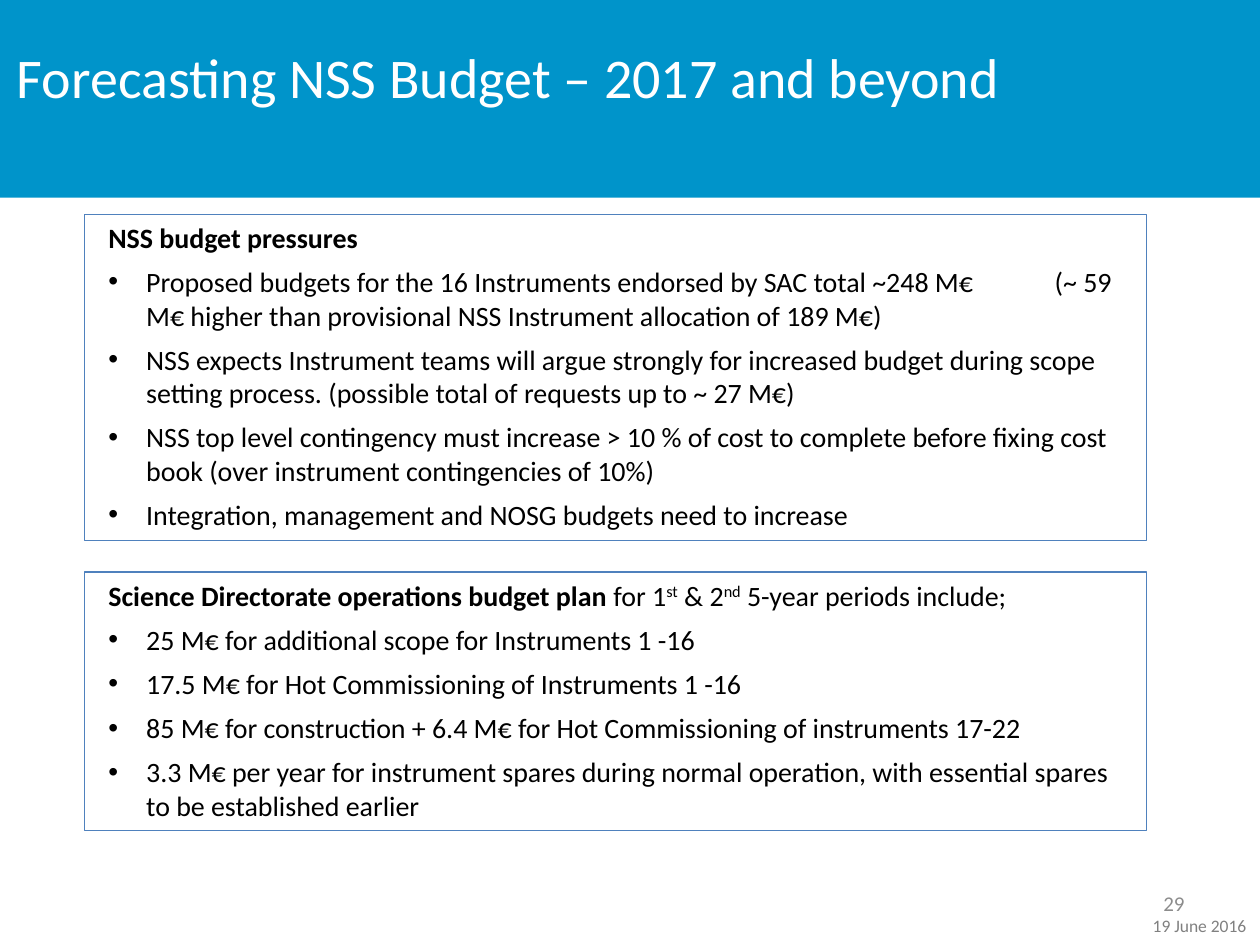
from lxml.etree import SubElement
from pptx import Presentation
from pptx.dml.color import RGBColor
from pptx.enum.shapes import MSO_SHAPE
from pptx.enum.text import MSO_ANCHOR, MSO_AUTO_SIZE, PP_ALIGN
from pptx.oxml.ns import qn
from pptx.util import Inches, Pt

COLUMNS, ROWS = 100, 75
TWO_CONTENT_LAYOUT = 3


def color(value):
    return RGBColor.from_string(value)


class BudgetSlide:
    """Holds the style and the current slide; places are columns and rows."""

    font = "Calibri"
    blue, white, black = "0094CA", "FFFFFF", "000000"
    outline, gray = "4F81BD", "808080"
    list_size = 16

    def __init__(self, deck):
        self.column = deck.slide_width / COLUMNS
        self.row = deck.slide_height / ROWS
        self.page = deck.slides.add_slide(deck.slide_layouts[TWO_CONTENT_LAYOUT])

    def area(self, left, top, width, height):
        return (round(left * self.column), round(top * self.row),
                round(width * self.column), round(height * self.row))

    def move(self, shape, *place):
        shape.left, shape.top, shape.width, shape.height = self.area(*place)

    def style(self, font, size, value, bold=False):
        font.name, font.size, font.bold = self.font, Pt(size), bold
        font.color.rgb = color(value)

    def band(self, *place):
        """Draw the header band behind everything else."""
        band = self.page.shapes.add_shape(MSO_SHAPE.RECTANGLE, *self.area(*place))
        band.shadow.inherit = False
        band.fill.solid()
        band.fill.fore_color.rgb = color(self.blue)
        band.line.fill.background()
        self.page.shapes._spTree.insert(2, band._element)

    def title(self, text, *place):
        title = self.page.shapes.title
        self.move(title, *place)
        frame = title.text_frame
        frame.text = text
        frame.vertical_anchor = MSO_ANCHOR.TOP
        frame.auto_size = MSO_AUTO_SIZE.NONE
        frame.paragraphs[0].alignment = PP_ALIGN.CENTER
        self.style(frame.paragraphs[0].runs[0].font, 32, self.white)

    def label(self, text, size, value, align, *place):
        box = self.page.shapes.add_textbox(*self.area(*place))
        frame = box.text_frame
        frame.text = text
        frame.vertical_anchor = MSO_ANCHOR.MIDDLE
        frame.paragraphs[0].alignment = align
        self.style(frame.paragraphs[0].runs[0].font, size, value)

    def indent(self, paragraph, left, hanging, bullet=None, tab=None):
        properties = paragraph._p.get_or_add_pPr()
        properties.set("marL", str(Inches(left)))
        properties.set("indent", str(-Inches(hanging)))
        if bullet:
            SubElement(properties, qn("a:buFont"), typeface="Arial")
            SubElement(properties, qn("a:buChar"), char=bullet)
        else:
            SubElement(properties, qn("a:buNone"))
        if tab:
            stops = SubElement(properties, qn("a:tabLst"))
            SubElement(stops, qn("a:tab"), pos=str(Inches(tab)), algn="l")

    def panel(self, index, heading, items, *place):
        """Fill an outlined list; heading is (text, bold, baseline) spans."""
        panel = self.page.placeholders[index]
        self.move(panel, *place)
        panel.fill.solid()
        panel.fill.fore_color.rgb = color(self.white)
        panel.line.color.rgb = color(self.outline)
        panel.line.width = Pt(0.75)
        frame = panel.text_frame
        frame.word_wrap = True
        frame.auto_size = MSO_AUTO_SIZE.NONE
        frame.vertical_anchor = MSO_ANCHOR.TOP

        first = frame.paragraphs[0]
        self.indent(first, 0.5, 0.41)
        first.space_before = Pt(0)
        for text, bold, baseline in heading:
            span = first.add_run()
            span.text = text
            self.style(span.font, self.list_size, self.black, bold)
            if baseline:
                span.font._element.set("baseline", str(baseline * 1000))

        for item in items:
            para = frame.add_paragraph()
            para.text = item
            self.indent(para, 0.39, 0.3, "•", 7.6 if "\t" in item else None)
            para.space_before = Pt(6)
            for span in para.runs:
                self.style(span.font, self.list_size, self.black)


def main():
    deck = Presentation()
    deck.slide_width, deck.slide_height = Inches(10), Inches(7.5)
    slide = BudgetSlide(deck)
    slide.band(0, 0, COLUMNS, 15.7)
    slide.title("Forecasting NSS Budget – 2017 and beyond", 0, 2.9, 80.7, 9.5)
    slide.label("29", 12, "8C8C8C", PP_ALIGN.RIGHT, 71.7, 69.7, 23.3, 4)
    slide.label("19 June 2016", 10, slide.gray, PP_ALIGN.LEFT, 90.5, 72.1, 9.5, 2.7)
    slide.panel(2, [
        ("Science Directorate operations budget plan ", True, 0),
        ("for 1", False, 0),
        ("st", False, 30),
        (" & 2", False, 0),
        ("nd", False, 30),
        (" 5-year periods include;", False, 0),
    ], [
        "25 M€ for additional scope for Instruments 1 -16",
        "17.5 M€ for Hot Commissioning of Instruments 1 -16",
        "85 M€ for construction + 6.4 M€ for Hot Commissioning of instruments 17-22",
        "3.3 M€ per year for instrument spares during normal operation, "
        "with essential spares to be established earlier",
    ], 6.7, 45.4, 84.3, 20.5)
    slide.panel(1, [("NSS budget pressures", True, 0)], [
        "Proposed budgets for the 16 Instruments endorsed by SAC total ~248 M€\t"
        "(~ 59 M€ higher than provisional NSS Instrument allocation of 189 M€)",
        "NSS expects Instrument teams will argue strongly for increased budget "
        "during scope setting process. (possible total of requests up to ~ 27 M€)",
        "NSS top level contingency must increase > 10 % of cost to complete "
        "before fixing cost book (over instrument contingencies of 10%)",
        "Integration, management and NOSG budgets need to increase",
    ], 6.7, 17, 84.3, 25.9)
    deck.save("out.pptx")


if __name__ == "__main__":
    main()
